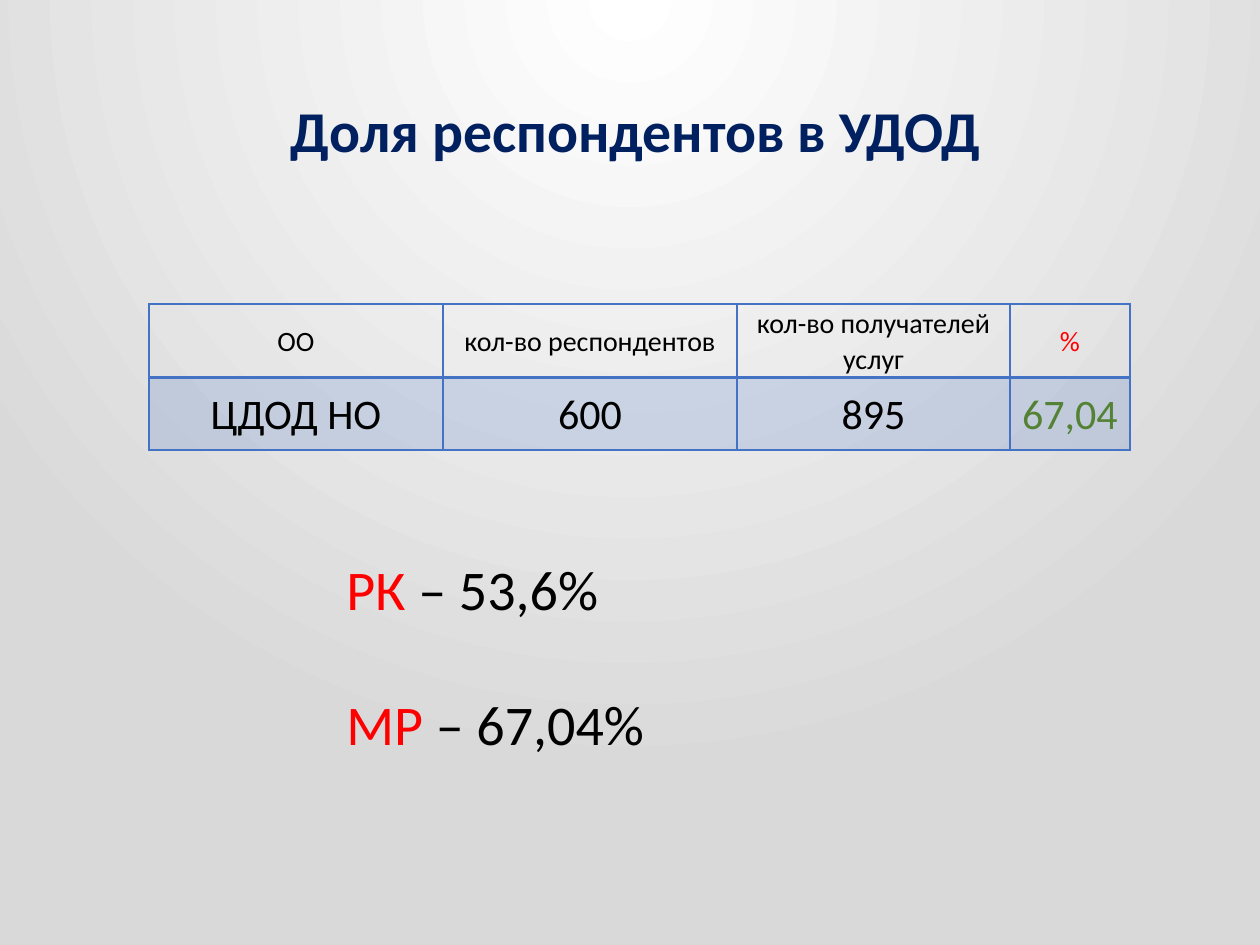
from lxml import etree
from pptx import Presentation, util as u
from pptx.dml.color import RGBColor
from pptx.enum import text
from pptx.oxml import parse_xml

THEME = dict(font="Calibri", navy="002060", black="000000", red="FF0000",
             green="548235", blue="4472C4", title=33, header=16, value=24, note=32)
NS = "http://schemas.openxmlformats.org/drawingml/2006/main"
PML = "http://schemas.openxmlformats.org/presentationml/2006/main"


def px(n):
    return u.Emu(round(n * 914400 / 126))


def add_run(p, words, size, color, bold=False):
    r = p.add_run()
    r.text = words
    for key, value in dict(name=THEME["font"], size=u.Pt(size), bold=bold).items():
        setattr(r.font, key, value)
    r.font.color.rgb = RGBColor.from_string(color)


prs = Presentation()
prs.slide_width, prs.slide_height = px(1260), px(945)
s = prs.slides.add_slide(prs.slide_layouts[5])

# Radial background
s.background.fill.solid()
bg = s.background.fill._xPr
bg.getparent().replace(bg, parse_xml(
    f'<p:bgPr xmlns:p="{PML}" xmlns:a="{NS}"><a:gradFill rotWithShape="1"><a:gsLst>'
    '<a:gs pos="0"><a:srgbClr val="FFFFFF"/></a:gs>'
    '<a:gs pos="100000"><a:srgbClr val="D9D9D9"/></a:gs></a:gsLst><a:path path="circle">'
    '<a:fillToRect l="50000" t="-80000" r="50000" b="180000"/></a:path>'
    '</a:gradFill><a:effectLst/></p:bgPr>'))

# Title
title = s.shapes.title
title.left, title.top, title.width, title.height = px(93), px(42), px(1086), px(183)
tf = title.text_frame
for key, value in dict(word_wrap=True, auto_size=text.MSO_AUTO_SIZE.NONE,
                       vertical_anchor=text.MSO_ANCHOR.MIDDLE).items():
    setattr(tf, key, value)
p = tf.paragraphs[0]
p.alignment, p.line_spacing = text.PP_ALIGN.CENTER, 0.9
add_run(p, "Доля респондентов в УДОД", THEME["title"], THEME["navy"], True)

# Respondent table
rows = [
    (["ОО", "кол-во респондентов", "кол-во получателей услуг", "%"], "header", "red"),
    (["ЦДОД НО", "600", "895", "67,04"], "value", "green"),
]
widths = [294, 294, 273, 120]
row_height = 73
table = s.shapes.add_table(len(rows), len(widths), px(149), px(304),
                           px(sum(widths)), px(row_height * len(rows))).table
for column, width in zip(table.columns, widths):
    column.width = px(width)
for i, (labels, size, last_color) in enumerate(rows):
    table.rows[i].height = px(row_height)
    is_header = i == 0
    for j, label in enumerate(labels):
        cell = table.cell(i, j)
        is_last = j == len(labels) - 1
        cell_format = dict(margin_left=px(5), margin_right=px(5), margin_top=0,
                           margin_bottom=0, vertical_anchor=text.MSO_ANCHOR.MIDDLE)
        for key, value in cell_format.items():
            setattr(cell, key, value)
        p = cell.text_frame.paragraphs[0]
        p.alignment, p.line_spacing = text.PP_ALIGN.CENTER, 1.07
        add_run(p, label, THEME[size], THEME[last_color if is_last else "black"])

        tcPr = cell._tc.get_or_add_tcPr()
        divider = "lnB" if is_header else "lnT"
        for side in ("lnL", "lnR", "lnT", "lnB"):
            line_width = u.Pt(2 if side == divider else 1)
            ln = etree.SubElement(tcPr, f"{{{NS}}}{side}", w=str(line_width))
            fill = etree.SubElement(ln, f"{{{NS}}}solidFill")
            etree.SubElement(fill, f"{{{NS}}}srgbClr", val=THEME["blue"])
        if is_header:
            cell.fill.background()
        else:
            cell.fill.solid()
            cell.fill.fore_color.rgb = RGBColor.from_string(THEME["blue"])
            color = tcPr.find(f"{{{NS}}}solidFill/{{{NS}}}srgbClr")
            etree.SubElement(color, f"{{{NS}}}alpha", val="20000")

# Regional and municipal shares
tf = s.shapes.add_textbox(px(334), px(548), px(690), px(217)).text_frame
tf.word_wrap = True
for i, (area, share) in enumerate([("РК", "53,6%"), ("МР", "67,04%")]):
    p = tf.add_paragraph() if i else tf.paragraphs[0]
    if i:
        p.space_before = u.Pt(39)
    add_run(p, area, THEME["note"], THEME["red"])
    add_run(p, f" – {share}", THEME["note"], THEME["black"])

prs.save("out.pptx")
